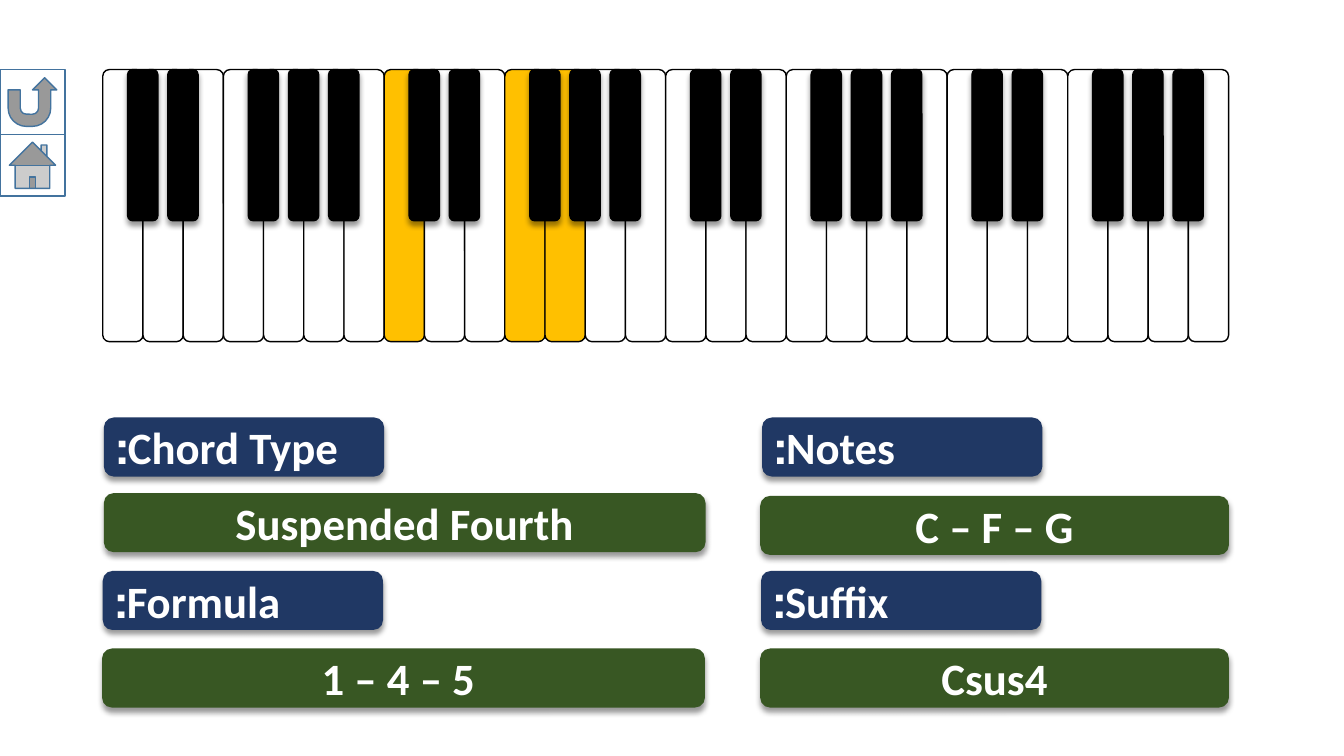
"""Draw the C suspended fourth chord on a piano keyboard."""
from lxml.etree import SubElement as Sub
from pptx import Presentation
from pptx.dml.color import RGBColor as RGB
from pptx.enum.shapes import MSO_SHAPE as Kind
from pptx.enum.text import MSO_ANCHOR as Anchor, PP_ALIGN as Align
from pptx.oxml.ns import qn
from pptx.util import Pt

WHITE = RGB(0xFF, 0xFF, 0xFF)
BLACK = RGB(0, 0, 0)
GOLD = RGB(0xFF, 0xC0, 0x00)
NAVY = RGB(0x20, 0x38, 0x64)
GREEN = RGB(0x38, 0x57, 0x23)
BLUE = RGB(0x43, 0x73, 0x9E)

LEFT, TOP, PITCH = 73.4, 49.7, 28.72
CHORD = (7, 10, 11)
SHARPS = (0, 1, 3, 4, 5)


class Board:
    font = "Calibri"
    size = 32

    def __init__(self, slide):
        self.slide = slide

    def shape(self, kind, x, y, w, h, fill, line=None):
        item = self.slide.shapes.add_shape(kind, Pt(x), Pt(y), Pt(w), Pt(h))
        item.shadow.inherit = False
        item.fill.solid()
        item.fill.fore_color.rgb = fill
        if line is None:
            item.line.fill.background()
        else:
            item.line.color.rgb = line
            item.line.width = Pt(1)
        return item

    def shade(self, item):
        effects = item._element.spPr.find(qn("a:effectLst"))
        shadow = Sub(effects, qn("a:outerShdw"), blurRad=str(Pt(4)),
                     dist=str(Pt(3)), dir="5400000", rotWithShape="0")
        color = Sub(shadow, qn("a:srgbClr"), val=str(BLACK))
        Sub(color, qn("a:alpha"), val="40000")

    def white(self, index):
        fill = GOLD if index in CHORD else WHITE
        self.shape(Kind.ROUNDED_RECTANGLE, LEFT + index * PITCH, TOP,
                   28.8, 194.4, fill, BLACK)

    def black(self, index):
        key = self.shape(Kind.ROUNDED_RECTANGLE, LEFT + index * PITCH + 17.8,
                         TOP, 21.6, 108, BLACK, BLACK)
        self.shade(key)

    def box(self, text, x, y, w, fill, align):
        item = self.shape(Kind.ROUNDED_RECTANGLE, x, y, w, 42.2, fill)
        self.shade(item)
        frame = item.text_frame
        frame.word_wrap = True
        frame.vertical_anchor = Anchor.MIDDLE
        para = frame.paragraphs[0]
        para.text = text
        para.alignment = align
        font = para.font
        font.name, font.size, font.bold = self.font, Pt(self.size), True
        font.color.rgb = WHITE
        return para

    def label(self, text, x, y):
        para = self.box(text, x, y, 200.2, NAVY, Align.LEFT)
        para._p.get_or_add_pPr().set("rtl", "1")

    def value(self, text, x, y, w):
        self.box(text, x, y, w, GREEN, Align.CENTER)

    def button(self, kind, y, h):
        self.shape(kind, 0, y, 46.4, h, WHITE, BLUE)


def main():
    deck = Presentation()
    deck.slide_width, deck.slide_height = Pt(960), Pt(540)
    board = Board(deck.slides.add_slide(deck.slide_layouts[6]))

    for index in range(28):
        board.white(index)
    for index in range(28):
        if index % 7 in SHARPS:
            board.black(index)

    board.label("Chord Type:", 74.2, 298.2)
    board.value("Suspended Fourth", 74.2, 352.2, 429.8)
    board.label("Formula:", 73.4, 407.8)
    board.value("1 – 4 – 5 ", 72.9, 463.2, 430.6)
    board.label("Notes:", 544.3, 298.2)
    board.value("C – F – G", 543, 354.2, 334.8)
    board.label("Suffix:", 543.6, 407.8)
    board.value("Csus4", 543, 463.2, 334.8)

    board.button(Kind.ACTION_BUTTON_RETURN, 49.7, 46.4)
    board.button(Kind.ACTION_BUTTON_HOME, 96.1, 44)
    deck.save("out.pptx")


if __name__ == "__main__":
    main()
